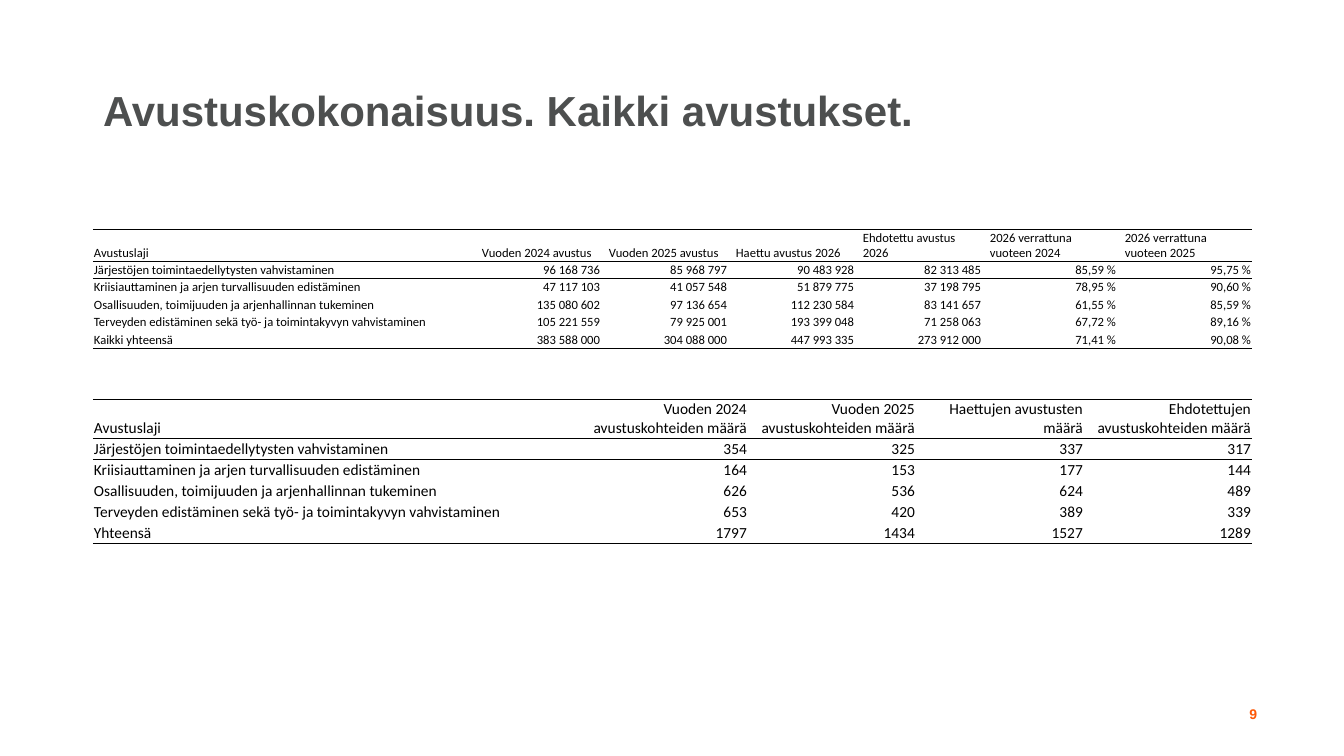
import lxml.etree
import pptx
import pptx.dml.color
import pptx.enum.text
import pptx.oxml.ns
import pptx.util
from dataclasses import dataclass

PX = 914400 / 100.8
ALIGN = pptx.enum.text.PP_ALIGN
ANCHOR = pptx.enum.text.MSO_ANCHOR
NO_STYLE_NO_GRID = "{2D5ABB26-0587-4C30-8999-92F81FD0307C}"


@dataclass(frozen=True)
class Theme:
    title: str = "4D4F4F"
    accent: str = "FD5705"
    ink: str = "000000"
    heading_font: str = "Arial"
    table_font: str = "Calibri"
    title_size: int = 30
    number_size: int = 10
    amounts_size: int = 9
    counts_size: int = 11
    rule: float = 0.5


theme = Theme()


def px(n):
    return pptx.util.Emu(round(n * PX))


def style(p, font, size, color, align, bold=False):
    p.alignment = align
    p.font.name = font
    p.font.size = pptx.util.Pt(size)
    p.font.bold = bold
    p.font.color.rgb = pptx.dml.color.RGBColor.from_string(color)


prs = pptx.Presentation()
prs.slide_width, prs.slide_height = px(1344), px(756)
s = prs.slides.add_slide(prs.slide_layouts[5])

title = s.shapes.title
title.left, title.top, title.width, title.height = px(93), px(40), px(906), px(146)
tf = title.text_frame
tf.text = "Avustuskokonaisuus. Kaikki avustukset."
tf.word_wrap = True
tf.auto_size = pptx.enum.text.MSO_AUTO_SIZE.NONE
tf.vertical_anchor = ANCHOR.MIDDLE
p = tf.paragraphs[0]
p.line_spacing = 0.9
style(p, theme.heading_font, theme.title_size, theme.title, ALIGN.LEFT, bold=True)

page_number = s.shapes.add_textbox(px(1178), px(701), px(89), px(40))
tf = page_number.text_frame
tf.word_wrap = True
tf.text = "9"
style(tf.paragraphs[0], theme.heading_font, theme.number_size, theme.accent,
      ALIGN.RIGHT, bold=True)

grant_types = [
    "Järjestöjen toimintaedellytysten vahvistaminen",
    "Kriisiauttaminen ja arjen turvallisuuden edistäminen",
    "Osallisuuden, toimijuuden ja arjenhallinnan tukeminen",
    "Terveyden edistäminen sekä työ- ja toimintakyvyn vahvistaminen",
]
amounts_header = [
    "Avustuslaji", "Vuoden 2024 avustus", "Vuoden 2025 avustus", "Haettu avustus 2026",
    "Ehdotettu avustus 2026", "2026 verrattuna vuoteen 2024", "2026 verrattuna vuoteen 2025",
]
amounts = [
    ["96 168 736", "85 968 797", "90 483 928", "82 313 485", "85,59 %", "95,75 %"],
    ["47 117 103", "41 057 548", "51 879 775", "37 198 795", "78,95 %", "90,60 %"],
    ["135 080 602", "97 136 654", "112 230 584", "83 141 657", "61,55 %", "85,59 %"],
    ["105 221 559", "79 925 001", "193 399 048", "71 258 063", "67,72 %", "89,16 %"],
    ["383 588 000", "304 088 000", "447 993 335", "273 912 000", "71,41 %", "90,08 %"],
]
counts_header = [
    "Avustuslaji", "Vuoden 2024 avustuskohteiden määrä", "Vuoden 2025 avustuskohteiden määrä",
    "Haettujen avustusten määrä", "Ehdotettujen avustuskohteiden määrä",
]
counts = [
    [354, 325, 337, 317],
    [164, 153, 177, 144],
    [626, 536, 624, 489],
    [653, 420, 389, 339],
    [1797, 1434, 1527, 1289],
]

# top, column widths, row heights, type size, header alignment, header indent, header, values, total
tables = [
    (229, [381] + [127] * 4 + [135] * 2, [32, 17, 17, 18, 17, 18], theme.amounts_size,
     ALIGN.LEFT, 8, amounts_header, amounts, "Kaikki yhteensä"),
    (399, [487] + [168] * 4, [39] + [21] * 5, theme.counts_size,
     ALIGN.RIGHT, 1, counts_header, counts, "Yhteensä"),
]

for top, widths, heights, size, header_align, indent, header, values, total in tables:
    rows = [header] + [[name] + row for name, row in zip(grant_types + [total], values)]
    frame = s.shapes.add_table(len(rows), len(header), px(93), px(top),
                               px(sum(widths)), px(sum(heights)))
    table = frame.table
    table.first_row = table.horz_banding = False
    table._tbl.tblPr.find(pptx.oxml.ns.qn("a:tableStyleId")).text = NO_STYLE_NO_GRID
    for column, width in zip(table.columns, widths):
        column.width = px(width)
    for i, row in enumerate(rows):
        table.rows[i].height = px(heights[i])
        sides = {0: ["lnT", "lnB"], 1: ["lnT"], len(rows) - 1: ["lnB"]}.get(i, [])
        for j, value in enumerate(row):
            cell = table.cell(i, j)
            cell.text = str(value)
            cell.vertical_anchor = ANCHOR.BOTTOM
            cell.margin_left = px(indent if i == 0 and j > 0 else 1)
            cell.margin_right = cell.margin_top = px(1)
            cell.margin_bottom = 0
            align = ALIGN.LEFT if j == 0 else header_align if i == 0 else ALIGN.RIGHT
            style(cell.text_frame.paragraphs[0], theme.table_font, size, theme.ink, align)
            tcPr = cell._tc.get_or_add_tcPr()
            for side in sides:
                ln = lxml.etree.SubElement(tcPr, pptx.oxml.ns.qn("a:" + side),
                                           w=str(pptx.util.Pt(theme.rule)))
                fill = lxml.etree.SubElement(ln, pptx.oxml.ns.qn("a:solidFill"))
                lxml.etree.SubElement(fill, pptx.oxml.ns.qn("a:srgbClr"), val=theme.ink)
            cell.fill.background()

prs.save("out.pptx")
